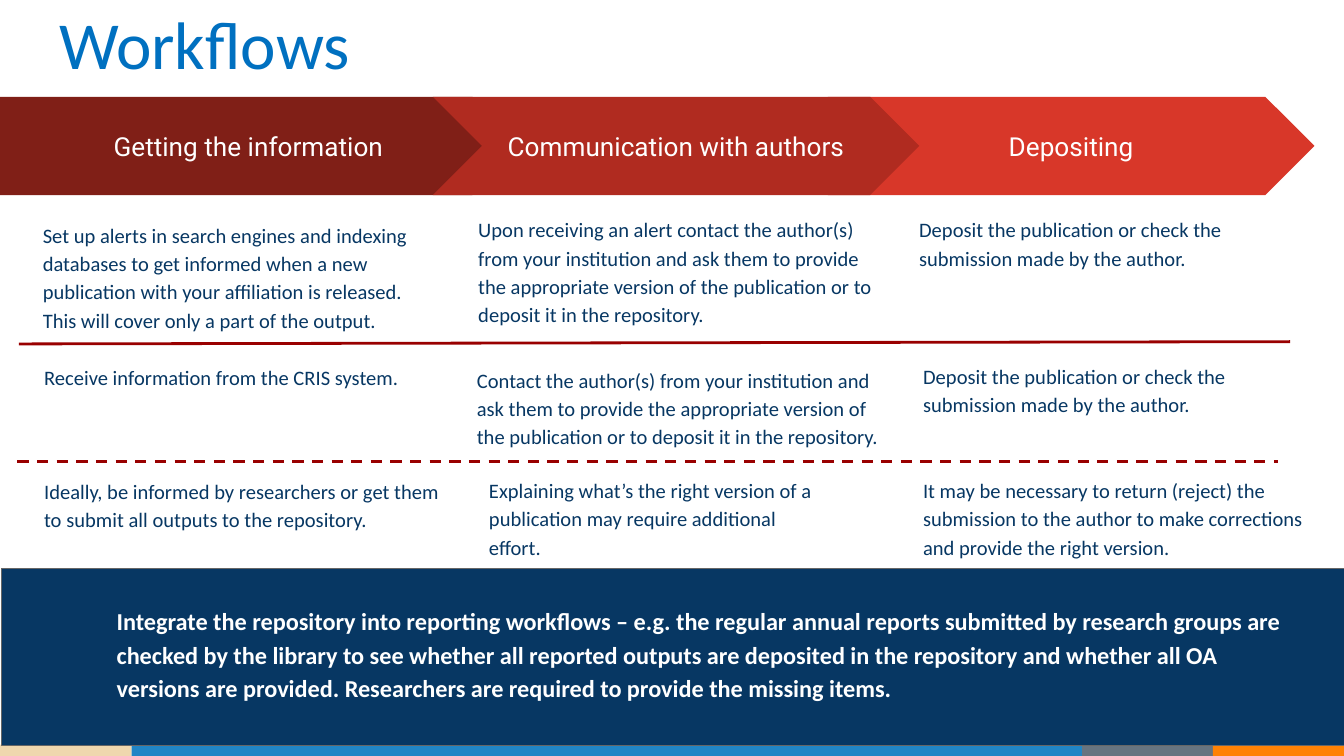
"""Build the Workflows slide: three steps, their tasks and a closing note."""
import pptx
import pptx.dml.color
import pptx.enum.dml
import pptx.enum.shapes
import pptx.enum.text
import pptx.oxml.ns
import pptx.util
import lxml.etree

COLORS = {
    "title": "0070C0", "navy": "073763", "white": "FFFFFF", "border": "666666",
    "rule": "990000", "dark": "801F17", "middle": "B02B20", "bright": "D83729",
    "sand": "EFD7AE", "blue": "2185C5", "gray": "677480", "orange": "FF8205",
}
RGB = {k: pptx.dml.color.RGBColor.from_string(v) for k, v in COLORS.items()}
SHAPE = pptx.enum.shapes.MSO_SHAPE
ALIGN = pptx.enum.text.PP_ALIGN
ANCHOR = pptx.enum.text.MSO_ANCHOR
Pt = pptx.util.Pt

prs = pptx.Presentation()
prs.slide_width = pptx.util.Inches(10)
prs.slide_height = pptx.util.Inches(5.625)
COL, ROW = prs.slide_width / 100, prs.slide_height / 100
slide = prs.slides.add_slide(prs.slide_layouts[5])


def grid(x, y, w, h):
    return [round(v) for v in (x * COL, y * ROW, w * COL, h * ROW)]


def write(s, paragraphs, color, para=None, frame=None, **font):
    tf = s.text_frame
    margins = dict.fromkeys(
        ("margin_left", "margin_top", "margin_right", "margin_bottom"), pptx.util.Inches(0.1))
    base = {"word_wrap": True, "auto_size": pptx.enum.text.MSO_AUTO_SIZE.NONE,
            "vertical_anchor": ANCHOR.TOP}
    for k, v in {**margins, **base, **(frame or {})}.items():
        setattr(tf, k, v)
    for i, text in enumerate(paragraphs):
        p = tf.add_paragraph() if i else tf.paragraphs[0]
        for k, v in {"alignment": ALIGN.LEFT, **(para or {})}.items():
            setattr(p, k, v)
        if i:
            p.space_before = Pt(46)
        r = p.add_run()
        r.text = text
        for k, v in {"name": "Calibri", **font}.items():
            setattr(r.font, k, v)
        r.font.color.rgb = RGB[color]


title = slide.shapes.title
title.left, title.top, title.width, title.height = grid(3.4, 2, 70.7, 10.7)
write(title, ["Workflows"], "title", frame={"vertical_anchor": ANCHOR.BOTTOM}, size=Pt(36))

blocks = [
    (SHAPE.RECTANGLE, 80.5, 98.5, 9.75, 1.5, "gray", ""),
    (SHAPE.RECTANGLE, 90.25, 98.5, 9.75, 1.5, "orange", ""),
    (SHAPE.RECTANGLE, 0, 98.5, 9.8, 1.5, "sand", ""),
    (SHAPE.RECTANGLE, 9.8, 98.5, 70.7, 1.5, "blue", ""),
    (SHAPE.RECTANGLE, 0.1, 75.2, 100, 23.4, "navy", ""),
    (SHAPE.CHEVRON, 61.6, 12.8, 36.2, 13, "bright", "Depositing"),
    (SHAPE.PENTAGON, 0, 12.8, 38.8, 13, "dark", "Getting the information"),
    (SHAPE.CHEVRON, 32.2, 12.8, 36.2, 13, "middle", "Communication with authors"),
]
for kind, x, y, w, h, color, label in blocks:
    s = slide.shapes.add_shape(kind, *grid(x, y, w, h))
    s.shadow.inherit = False
    s.fill.solid()
    s.fill.fore_color.rgb = RGB[color]
    if color == "navy":
        s.line.color.rgb = RGB["border"]
        s.line.width = Pt(0.75)
    else:
        s.line.fill.background()
    if label:
        write(s, [label], "white", {"alignment": ALIGN.CENTER},
              {"vertical_anchor": ANCHOR.MIDDLE}, name="Roboto", size=Pt(14))

deposit = "Deposit the publication or check the submission made by the author."
tasks = [
    (2.2, 27.2, 30.7, 19, ["Set up alerts in search engines and indexing databases to get informed "
                           "when a new publication with your affiliation is released. This will "
                           "cover only a part of the output."]),
    (34.6, 26.5, 32.5, 26.7, ["Upon receiving an alert contact the author(s) from your institution "
                              "and ask them to provide the appropriate version of the publication "
                              "or to deposit it in the repository."]),
    (67.4, 26.5, 28.5, 19.9, [deposit]),
    (2.3, 46, 31.6, 25.2, ["Receive information from the CRIS system.",
                           "Ideally, be informed by researchers or get them to submit all outputs "
                           "to the repository."]),
    (34.5, 46.4, 32.6, 26.7, ["Contact the author(s) from your institution and ask them to provide "
                              "the appropriate version of the publication or to deposit it in the "
                              "repository."]),
    (67.7, 45.9, 27.4, 17.8, [deposit]),
    (35.4, 61, 27.4, 16.7, ["Explaining what’s the right version of a publication may require "
                            "additional effort."]),
    (67.7, 61, 31.6, 16.7, ["It may be necessary to return (reject) the submission to the author "
                            "to make corrections and provide the right version."]),
]
for x, y, w, h, paragraphs in tasks:
    s = slide.shapes.add_textbox(*grid(x, y, w, h))
    write(s, paragraphs, "navy", {"line_spacing": 1.15}, size=Pt(11))

rules = [
    (1.4, 45.5, 96, 45.2, pptx.enum.dml.MSO_LINE.SOLID),
    (1.3, 61, 95.1, 61, pptx.enum.dml.MSO_LINE.DASH),
]
for x1, y1, x2, y2, dash in rules:
    s = slide.shapes.add_connector(
        pptx.enum.shapes.MSO_CONNECTOR.STRAIGHT, *grid(x1, y1, x2, y2))
    s.line.color.rgb = RGB["rule"]
    for k, v in {"width": Pt(1.5), "dash_style": dash}.items():
        setattr(s.line, k, v)
    lxml.etree.SubElement(s._element.spPr, pptx.oxml.ns.qn("a:effectLst"))

note = slide.shapes.add_textbox(*grid(7.7, 77.9, 89, 16.4))
write(note, ["Integrate the repository into reporting workflows – e.g. the regular annual reports "
             "submitted by research groups are checked by the library to see whether all reported "
             "outputs are deposited in the repository and whether all OA versions are provided. "
             "Researchers are required to provide the missing items."],
      "white", {"line_spacing": 1.15},
      {"auto_size": pptx.enum.text.MSO_AUTO_SIZE.SHAPE_TO_FIT_TEXT}, size=Pt(13), bold=True)

prs.save("out.pptx")
